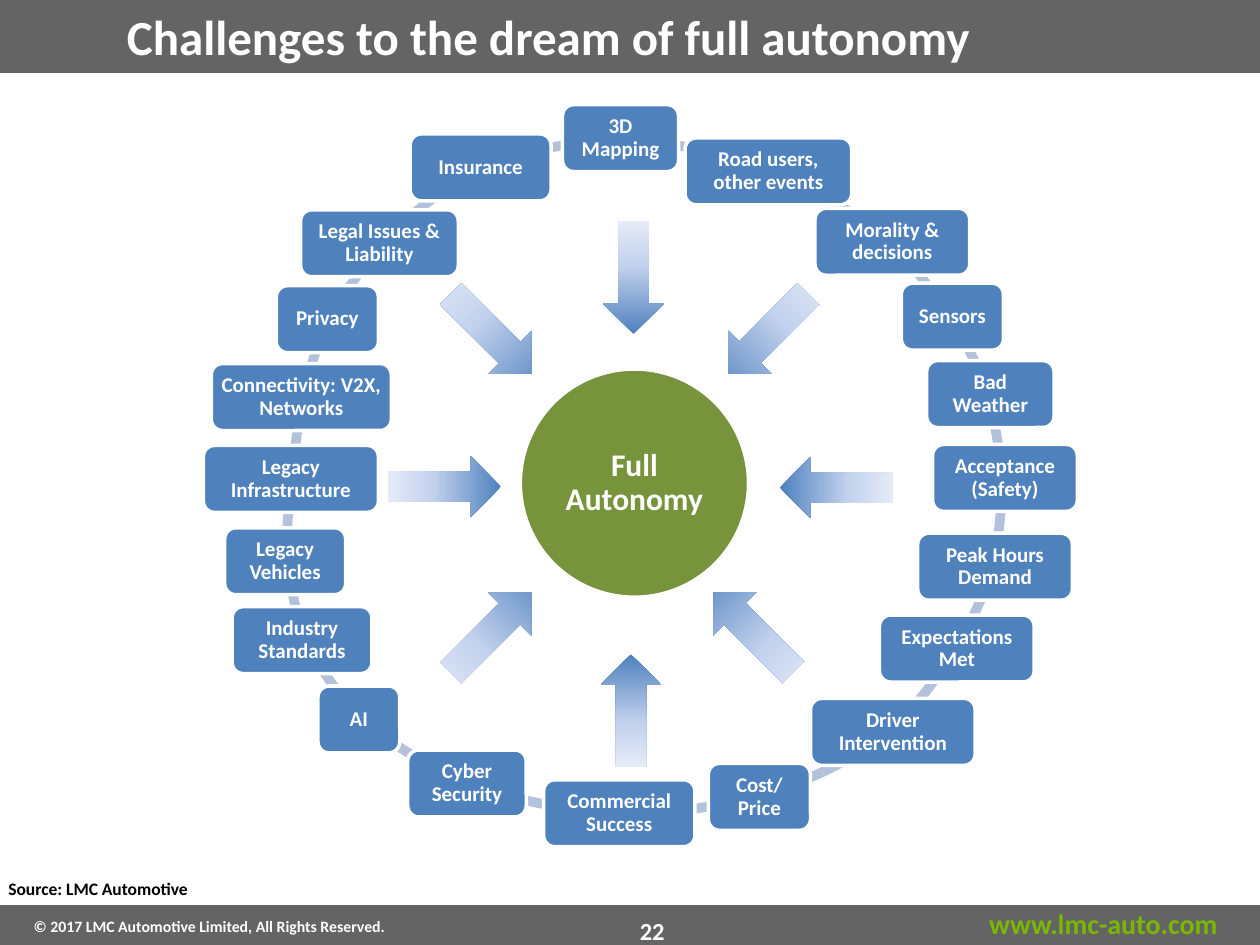
import copy
from typing import NamedTuple

import pptx
import pptx.dml.color
import pptx.enum.shapes
import pptx.enum.text
import pptx.util

Cm = pptx.util.Cm
RGB = pptx.dml.color.RGBColor
KIND = pptx.enum.shapes.MSO_SHAPE
ALIGN = pptx.enum.text.PP_ALIGN
ANCHOR = pptx.enum.text.MSO_ANCHOR

WHITE = RGB(0xFF, 0xFF, 0xFF)
BLACK = RGB(0, 0, 0)
GREY = RGB(0x64, 0x64, 0x64)
LIME = RGB(0x7A, 0xB8, 0x00)
GREEN = RGB(0x77, 0x93, 0x3C)
BLUE = RGB(0x4F, 0x81, 0xBD)
PALE = RGB(0xB3, 0xC1, 0xDB)
FADE = [(0, BLUE), (0.6, RGB(0xC2, 0xD1, 0xED)), (1, RGB(0xE5, 0xEB, 0xF7))]

FONT = {"name": "Calibri", "bold": True}
RING = 13.97
HIGH = 1.35
LONG, THICK = 2.28, 1.22


class Arc(NamedTuple):
    left: float
    top: float
    start: float
    end: float


class Issue(NamedTuple):
    text: str
    left: float
    top: float
    width: float


class Arrow(NamedTuple):
    left: float
    top: float
    turn: int


class Label(NamedTuple):
    text: str
    left: float
    top: float
    width: float
    height: float
    size: int
    color: RGB
    align: ALIGN = ALIGN.LEFT


ARCS = [
    Arc(5.49, 2.74, 246.4, 270.3), Arc(5.79, 2.59, 222.3, 243.6),
    Arc(5.79, 2.62, 207.1, 222.4), Arc(5.89, 2.36, 191.2, 204.9),
    Arc(5.82, 2.74, 180.5, 194.4), Arc(5.69, 3.94, 176.8, 190.6),
    Arc(5.69, 3.73, 161.5, 175.1), Arc(5.26, 2.72, 136.3, 152.5),
    Arc(4.8, 2.29, 109.9, 131), Arc(5.26, 2.46, 88, 114),
    Arc(6.12, 2.49, 71.5, 95.2), Arc(6.68, 2.34, 51.6, 76.4),
    Arc(6.25, 2.72, 29, 46.6), Arc(6.48, 2.34, 17.6, 32.6),
    Arc(6.32, 2.82, 358.5, 13.4), Arc(6.32, 2.97, 343.1, 357.2),
    Arc(6.43, 3.23, 326.5, 340.9), Arc(6.22, 2.92, 313.6, 329.6),
    Arc(6.4, 3.07, 287.7, 311.6), Arc(5.54, 2.74, 269.8, 295.3),
]

ISSUES = [
    Issue("3D Mapping", 11.34, 2.11, 2.34),
    Issue("Road users, other events", 13.81, 2.78, 3.36),
    Issue("Morality & decisions", 16.43, 4.2, 3.12),
    Issue("Sensors", 18.17, 5.71, 2.06),
    Issue("Bad Weather", 18.68, 7.27, 2.57),
    Issue("Acceptance (Safety)", 18.8, 8.96, 2.92),
    Issue("Peak Hours Demand", 18.5, 10.75, 3.12),
    Issue("Expectations Met", 17.73, 12.4, 3.12),
    Issue("Driver Intervention", 16.34, 14.08, 3.32),
    Issue("Cost/ Price", 14.28, 15.39, 2.06),
    Issue("Commercial Success", 10.96, 15.72, 3.05),
    Issue("Cyber Security", 8.22, 15.12, 2.39),
    Issue("AI", 6.41, 13.83, 1.65),
    Issue("Industry Standards", 4.68, 12.23, 2.82),
    Issue("Legacy Vehicles", 4.53, 10.64, 2.44),
    Issue("Legacy Infrastructure", 4.1, 8.98, 3.53),
    Issue("Connectivity: V2X, Networks", 4.26, 7.33, 3.63),
    Issue("Privacy", 5.57, 5.76, 2.06),
    Issue("Legal Issues & Liability", 6.06, 4.23, 3.18),
    Issue("Insurance", 8.27, 2.7, 2.84),
]

ARROWS = [
    Arrow(11.58, 13.72, 270), Arrow(8.76, 6.12, 45), Arrow(7.82, 9.2, 0),
    Arrow(8.76, 12.14, 315), Arrow(14.05, 12.14, 225),
    Arrow(14.35, 6.12, 135), Arrow(15.72, 9.22, 180),
    Arrow(11.63, 4.98, 90),
]

LABELS = [
    Label("www.lmc-auto.com", 19.35, 18.16, 5.79, 0.94, 16, LIME, ALIGN.CENTER),
    Label("© 2017 LMC Automotive Limited, All Rights Reserved.",
          0.43, 18.36, 9.12, 0.64, 9, WHITE),
    Label("22", 8.59, 18.34, 9.12, 0.84, 14, WHITE, ALIGN.CENTER),
    Label("Challenges to the dream of full autonomy",
          2.31, 0, 20.96, 1.45, 28, WHITE),
    Label("Source: LMC Automotive", -0.08, 17.58, 9.07, 0.69, 10, BLACK),
]


def add(slide, kind: KIND, left: float, top: float, width: float, height: float,
        fill: RGB | None = None, edge: RGB | None = None):
    """Draw a preset shape without shadow; an edge is 2 pt wide."""
    shape = slide.shapes.add_shape(kind, Cm(left), Cm(top), Cm(width), Cm(height))
    shape.shadow.inherit = False
    if fill is not None:
        shape.fill.solid()
        shape.fill.fore_color.rgb = fill
    if edge is None:
        shape.line.fill.background()
    else:
        shape.line.color.rgb = edge
        shape.line.width = pptx.util.Pt(2)
    return shape


def write(shape, text: str, size: int, color: RGB, align: ALIGN) -> None:
    shape.text_frame.word_wrap = True
    par = shape.text_frame.paragraphs[0]
    par.alignment = align
    run = par.add_run()
    run.text = text
    for key, value in {**FONT, "size": pptx.util.Pt(size)}.items():
        setattr(run.font, key, value)
    run.font.color.rgb = color


def fill_in(shape, text: str, size: int, inset: float) -> None:
    """Centre white text inside a shape."""
    write(shape, text, size, WHITE, ALIGN.CENTER)
    frame = shape.text_frame
    frame.vertical_anchor = ANCHOR.MIDDLE
    frame.paragraphs[0].line_spacing = 0.9
    for side in ("left", "top", "right", "bottom"):
        setattr(frame, f"margin_{side}", Cm(inset))


def draw_arc(slide, arc: Arc) -> None:
    shape = add(slide, KIND.BLOCK_ARC, arc.left, arc.top, RING, RING, PALE)
    # Angles are stored in 1/60000 degree, adjustments in 1/100000.
    for i, value in enumerate((arc.start * 0.6, arc.end * 0.6, 0.014)):
        shape.adjustments[i] = value


def draw_issue(slide, issue: Issue) -> None:
    shape = add(slide, KIND.ROUNDED_RECTANGLE, issue.left, issue.top,
                issue.width, HIGH, BLUE, WHITE)
    fill_in(shape, issue.text, 12, 0.1)


def draw_arrow(slide, arrow: Arrow) -> None:
    shape = add(slide, KIND.RIGHT_ARROW, arrow.left, arrow.top, LONG, THICK)
    shape.rotation = arrow.turn
    shape.fill.gradient()
    shape.fill.gradient_angle = 180
    stops = shape._element.spPr.xpath(".//a:gsLst")[0]
    stops.append(copy.deepcopy(stops[0]))
    for stop, (place, color) in zip(shape.fill.gradient_stops, FADE):
        stop.position = place
        stop.color.rgb = color


def draw_label(slide, label: Label) -> None:
    box = slide.shapes.add_textbox(Cm(label.left), Cm(label.top),
                                   Cm(label.width), Cm(label.height))
    write(box, label.text, label.size, label.color, label.align)


def main() -> None:
    deck = pptx.Presentation()
    deck.slide_width, deck.slide_height = Cm(25.4), Cm(19.05)
    slide = deck.slides.add_slide(deck.slide_layouts[6])
    add(slide, KIND.RECTANGLE, 0, 0, 25.4, 1.47, GREY)
    add(slide, KIND.RECTANGLE, 0, 18.29, 25.4, 0.8, GREY, GREY)
    for arc in ARCS:
        draw_arc(slide, arc)
    hub = add(slide, KIND.OVAL, 10.49, 7.44, 4.6, 4.6, GREEN, WHITE)
    fill_in(hub, "Full Autonomy", 18, 0.08)
    for issue in ISSUES:
        draw_issue(slide, issue)
    for arrow in ARROWS:
        draw_arrow(slide, arrow)
    for label in LABELS:
        draw_label(slide, label)
    deck.save("out.pptx")


if __name__ == "__main__":
    main()
